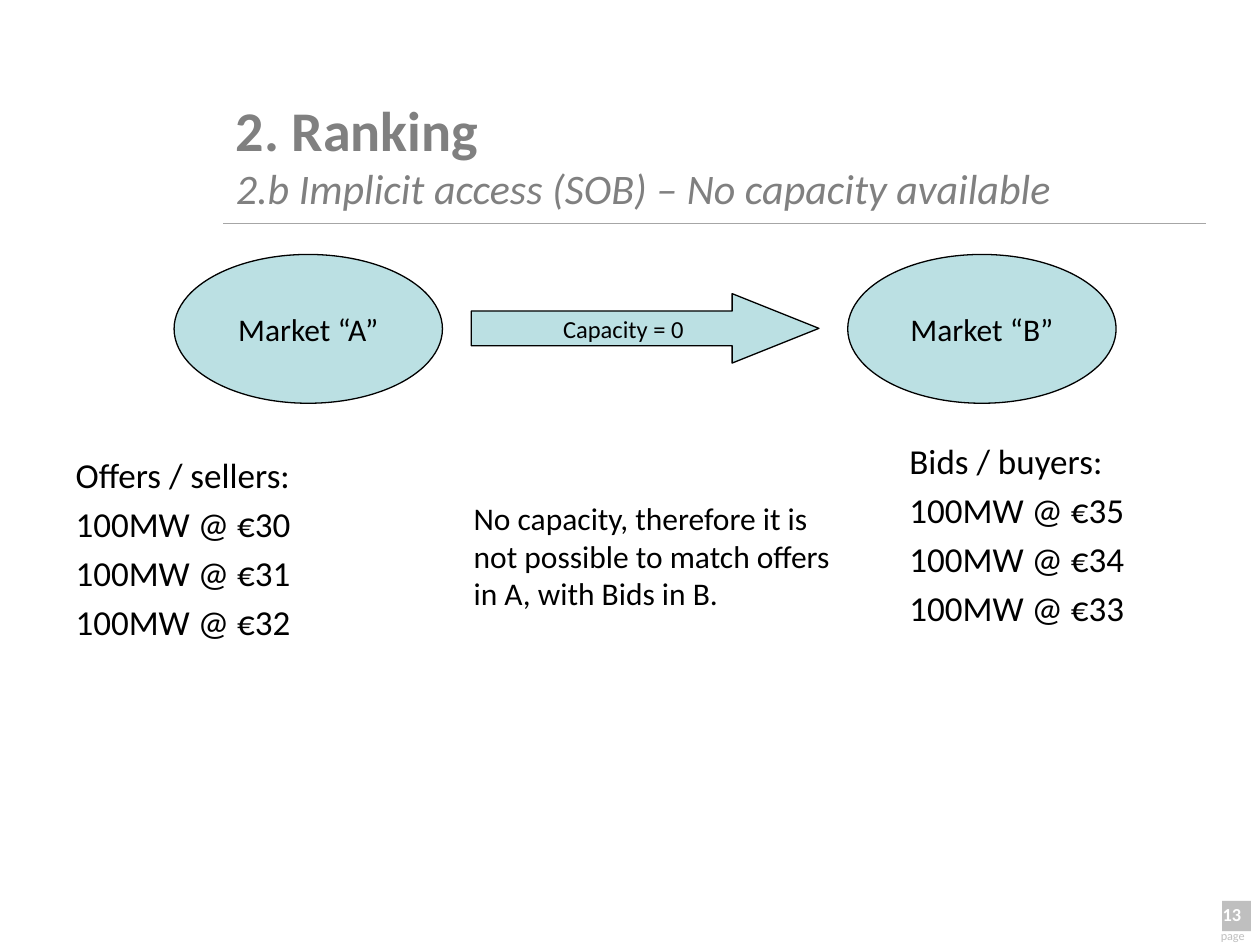
"""Build the ranking slide on implicit access with no capacity available."""
from lxml.etree import SubElement
from pptx import Presentation
from pptx.dml.color import RGBColor
from pptx.enum.shapes import MSO_CONNECTOR, MSO_SHAPE
from pptx.enum.text import MSO_ANCHOR, MSO_AUTO_SIZE, PP_ALIGN
from pptx.oxml.ns import qn
from pptx.util import Cm, Pt


def tint(part, color):
    if hasattr(part, "solid"):
        part.solid()
        part.fore_color.rgb = RGBColor.from_string(color)
    else:
        part.color.rgb = RGBColor.from_string(color)


def write(par, text, color, **look):
    run = par.add_run()
    run.text = text
    tint(run.font, color)
    for name, value in {"name": "Calibri", **look}.items():
        setattr(run.font, name, value)


deck = Presentation()
deck.slide_width, deck.slide_height = Cm(25.4), Cm(19.05)
slide = deck.slides.add_slide(deck.slide_layouts[3])
shapes = slide.shapes
title, offers, bids = slide.placeholders

rule = shapes.add_connector(MSO_CONNECTOR.STRAIGHT, Cm(4.5), Cm(4.5), Cm(24.31), Cm(4.5))
tint(rule.line, "A6A6A6")
rule.line.width = Pt(0.75)
SubElement(rule._element.spPr, qn("a:effectLst"))

title.left, title.top, title.width, title.height = Cm(4.5), Cm(1.73), Cm(20.9), Cm(2.77)
frame = title.text_frame
frame.auto_size = MSO_AUTO_SIZE.NONE
frame.vertical_anchor = MSO_ANCHOR.MIDDLE
head = frame.paragraphs[0]
head.alignment = PP_ALIGN.LEFT
write(head, "2. Ranking", "808080", size=Pt(32), bold=True)
head.add_line_break()
write(head, "2.b Implicit access (SOB) – No capacity available", "808080",
      size=Pt(24), bold=False, italic=True)

lists = [
    (offers, (1.27, 9.02, 6.43, 5), "Offers / sellers:", (30, 31, 32)),
    (bids, (18.08, 8.74, 7.04, 5.59), "Bids / buyers:", (35, 34, 33)),
]
for box, place, label, prices in lists:
    box.left, box.top, box.width, box.height = map(Cm, place)
    frame = box.text_frame
    frame.auto_size = MSO_AUTO_SIZE.NONE
    for row, text in enumerate([label] + [f"100MW @ €{price}" for price in prices]):
        par = frame.add_paragraph() if row else frame.paragraphs[0]
        props = par._p.get_or_add_pPr()
        props.set("marL", str(Cm(0.95)))
        props.set("indent", str(Cm(-0.95)))
        SubElement(props, qn("a:buNone"))
        par.space_before = Pt(4 if row else 0)
        write(par, text, "000000", size=Pt(20))

nodes = [
    (MSO_SHAPE.OVAL, (3.51, 5.13, 5.41, 3), "Market “A”", 18),
    (MSO_SHAPE.OVAL, (17.09, 5.13, 5.41, 3), "Market “B”", 18),
    (MSO_SHAPE.RIGHT_ARROW, (9.5, 5.92, 7.01, 1.4), "Capacity = 0", 14),
]
for kind, place, text, size in nodes:
    node = shapes.add_shape(kind, *map(Cm, place))
    node.shadow.inherit = False
    tint(node.fill, "BBE0E3")
    tint(node.line, "000000")
    node.line.width = Pt(0.75)
    if kind == MSO_SHAPE.RIGHT_ARROW:
        node.adjustments[1] = 1.25
    frame = node.text_frame
    frame.word_wrap = False
    frame.vertical_anchor = MSO_ANCHOR.MIDDLE
    frame.paragraphs[0].alignment = PP_ALIGN.CENTER
    write(frame.paragraphs[0], text, "000000", size=Pt(size))

note = shapes.add_textbox(Cm(9.3), Cm(9.93), Cm(7.8), Cm(2.54)).text_frame
note.word_wrap = True
write(note.paragraphs[0],
      "No capacity, therefore it is not possible to match offers in A, with Bids in B.",
      "000000", size=Pt(18))

badge = shapes.add_shape(MSO_SHAPE.RECTANGLE, Cm(24.64), Cm(18.16), Cm(0.58), Cm(0.61))
badge.shadow.inherit = False
tint(badge.fill, "BFBFBF")
badge.line.fill.background()

count = shapes.add_textbox(Cm(24.13), Cm(18.08), Cm(1.14), Cm(0.69)).text_frame
count.word_wrap = False
count.paragraphs[0].alignment = PP_ALIGN.RIGHT
write(count.paragraphs[0], "13", "FFFFFF", size=Pt(10.5), bold=True)

page = shapes.add_textbox(Cm(24.61), Cm(18.8), Cm(0.64), Cm(0.13)).text_frame
look = {"margin_left": 0, "margin_top": 0, "margin_right": 0, "margin_bottom": 0,
        "word_wrap": True, "vertical_anchor": MSO_ANCHOR.MIDDLE}
for name, value in look.items():
    setattr(page, name, value)
page.paragraphs[0].alignment = PP_ALIGN.JUSTIFY
write(page.paragraphs[0], "page", "BFBFBF", size=Pt(7))

deck.save("out.pptx")
